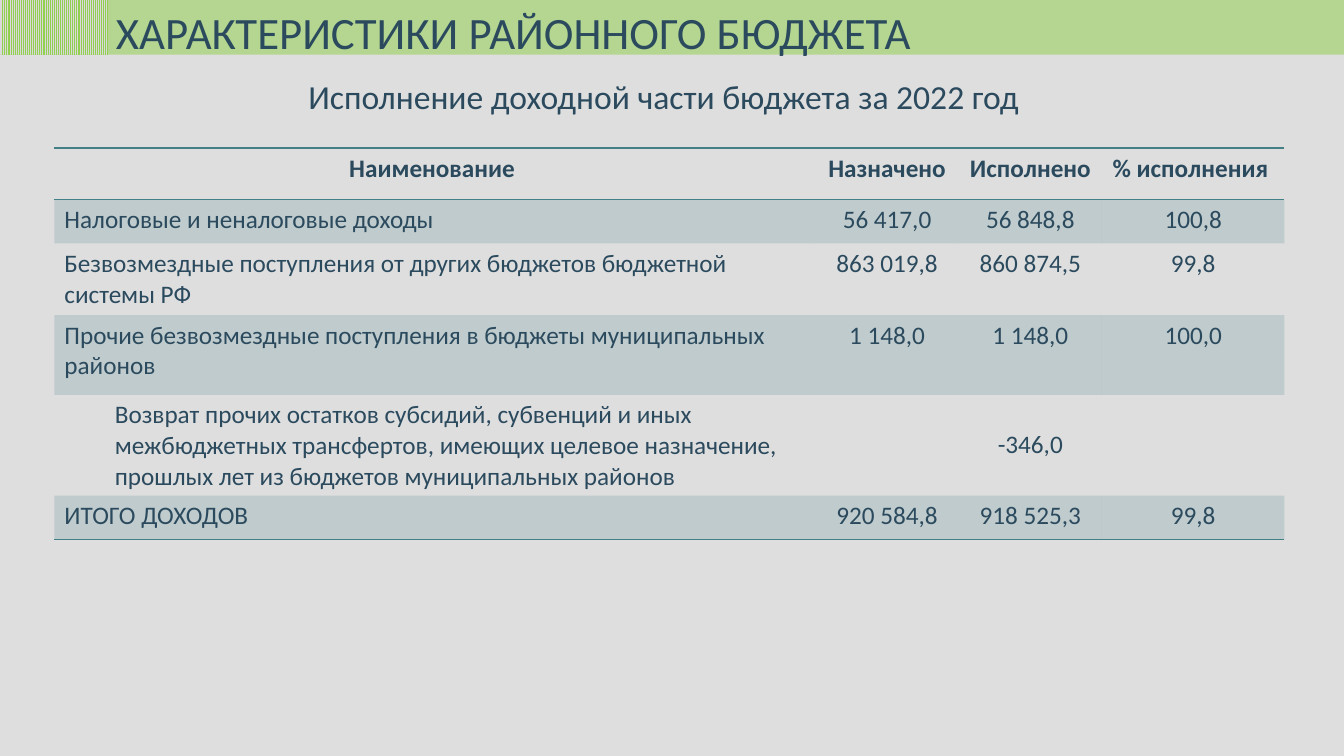
from dataclasses import dataclass

from lxml import etree
from pptx import Presentation, util as u
from pptx.dml import color as col
from pptx.enum import dml, shapes, text
from pptx.oxml import ns

Cm, Pt = u.Cm, u.Pt


@dataclass(frozen=True)
class Theme:
    font: str = "Calibri"
    ink: str = "2B4A5E"
    back: str = "DEDEDE"
    green: str = "92D050"
    gray: str = "D9D9D9"
    teal: str = "438086"
    title: int = 32
    lead: int = 24
    cell: int = 18


T = Theme()
PLAIN = "{2D5ABB26-0587-4C30-8999-92F81FD0307C}"
WIDE = Cm(33.87)
COLS = (19.18, 3.61, 3.61, 4.6)
TALL = (1.3, 1.1, 1.81, 2.01, 2.52, 1.11)
ROWS = (
    ("Наименование ", "Назначено ", "Исполнено ", "% исполнения "),
    ("Налоговые и неналоговые доходы", "56 417,0", "56 848,8", "100,8"),
    ("Безвозмездные поступления от других бюджетов бюджетной системы РФ",
     "863 019,8", "860 874,5", "99,8"),
    ("Прочие безвозмездные поступления в бюджеты муниципальных районов",
     "1 148,0", "1 148,0", "100,0"),
    ("Возврат прочих остатков субсидий, субвенций и иных межбюджетных "
     "трансфертов, имеющих целевое назначение, прошлых лет из бюджетов "
     "муниципальных районов", "", "-346,0", ""),
    ("ИТОГО ДОХОДОВ", "920 584,8", "918 525,3", "99,8"),
)
REFUND = 4


def rgb(code):
    return col.RGBColor.from_string(code)


def write(frame, words, size, bold=False, align=text.PP_ALIGN.CENTER):
    para = frame.paragraphs[0]
    para.alignment = align
    run = para.add_run()
    run.text = words
    font = run.font
    font.name, font.size, font.bold = T.font, Pt(size), bold
    font.color.rgb = rgb(T.ink)
    return para


def tint(fill, code, part):
    fill.solid()
    fill.fore_color.rgb = rgb(code)
    return part * 1000


def fade(root, part):
    tone = root.find(".//" + ns.qn("a:srgbClr"))
    etree.SubElement(tone, ns.qn("a:alpha"), val=str(part * 1000))


def wash(fill, root, code, part):
    fill.solid()
    fill.fore_color.rgb = rgb(code)
    fade(root, part)


def block(slide, width):
    box = slide.shapes.add_shape(
        shapes.MSO_SHAPE.RECTANGLE, 0, 0, width, Cm(1.38))
    box.shadow.inherit = False
    box.line.fill.background()
    return box


def band(slide):
    box = block(slide, WIDE)
    wash(box.fill, box.element.spPr, T.green, 54)


def stripes(slide):
    fill = block(slide, Cm(2.72)).fill
    fill.patterned()
    fill.pattern = dml.MSO_PATTERN.LIGHT_VERTICAL
    fill.fore_color.rgb = rgb(T.green)
    fill.back_color.rgb = rgb(T.gray)


def title(slide, words):
    box = slide.shapes.title
    box.left, box.top, box.width, box.height = Cm(2.57), 0, Cm(20.75), Cm(1.63)
    frame = box.text_frame
    frame.word_wrap = False
    frame.auto_size = text.MSO_AUTO_SIZE.NONE
    frame.vertical_anchor = text.MSO_ANCHOR.TOP
    write(frame, words, T.title)
    box.element.getparent().append(box.element)


def lead(slide, words):
    box = slide.shapes.add_textbox(0, Cm(1.8), Cm(33.45), Cm(1.27))
    box.text_frame.word_wrap = True
    write(box.text_frame, words, T.lead)


def rule(cell, tag):
    line = etree.Element(ns.qn(tag), w=str(Pt(1)))
    fill = etree.SubElement(line, ns.qn("a:solidFill"))
    etree.SubElement(fill, ns.qn("a:srgbClr"), val=T.teal)
    cell._tc.get_or_add_tcPr().insert(0, line)


def dress(cell, row):
    if row % 2:
        wash(cell.fill, cell._tc.get_or_add_tcPr(), T.teal, 20)
    else:
        cell.fill.background()
    if row in (0, len(ROWS) - 1):
        rule(cell, "a:lnB")
    if row == 0:
        rule(cell, "a:lnT")


def table(slide):
    frame = slide.shapes.add_table(
        len(ROWS), len(COLS), Cm(1.37), Cm(3.73), Cm(sum(COLS)), Cm(sum(TALL)))
    grid = frame.table
    grid.first_row = grid.horz_banding = False
    grid._tbl.tblPr.find(ns.qn("a:tableStyleId")).text = PLAIN
    for part, width in zip(grid.columns, COLS):
        part.width = Cm(width)
    for part, tall in zip(grid.rows, TALL):
        part.height = Cm(tall)
    for r, row in enumerate(ROWS):
        for c, words in enumerate(row):
            cell = grid.cell(r, c)
            dress(cell, r)
            if words:
                side = text.PP_ALIGN.LEFT if r and not c else text.PP_ALIGN.CENTER
                write(cell.text_frame, words, T.cell, r == 0, side)
    label = grid.cell(REFUND, 0).text_frame.paragraphs[0]
    label.level = 1
    props = label._p.get_or_add_pPr()
    props.set("marL", str(Cm(1.27)))
    props.set("indent", "0")
    grid.cell(REFUND, 2).vertical_anchor = text.MSO_ANCHOR.MIDDLE


def main():
    deck = Presentation()
    deck.slide_width, deck.slide_height = WIDE, Cm(19.05)
    slide = deck.slides.add_slide(deck.slide_layouts[5])
    fill = slide.background.fill
    fill.solid()
    fill.fore_color.rgb = rgb(T.back)
    band(slide)
    title(slide, "ХАРАКТЕРИСТИКИ РАЙОННОГО БЮДЖЕТА")
    stripes(slide)
    lead(slide, "Исполнение доходной части бюджета за 2022 год")
    table(slide)
    deck.save("out.pptx")


if __name__ == "__main__":
    main()
